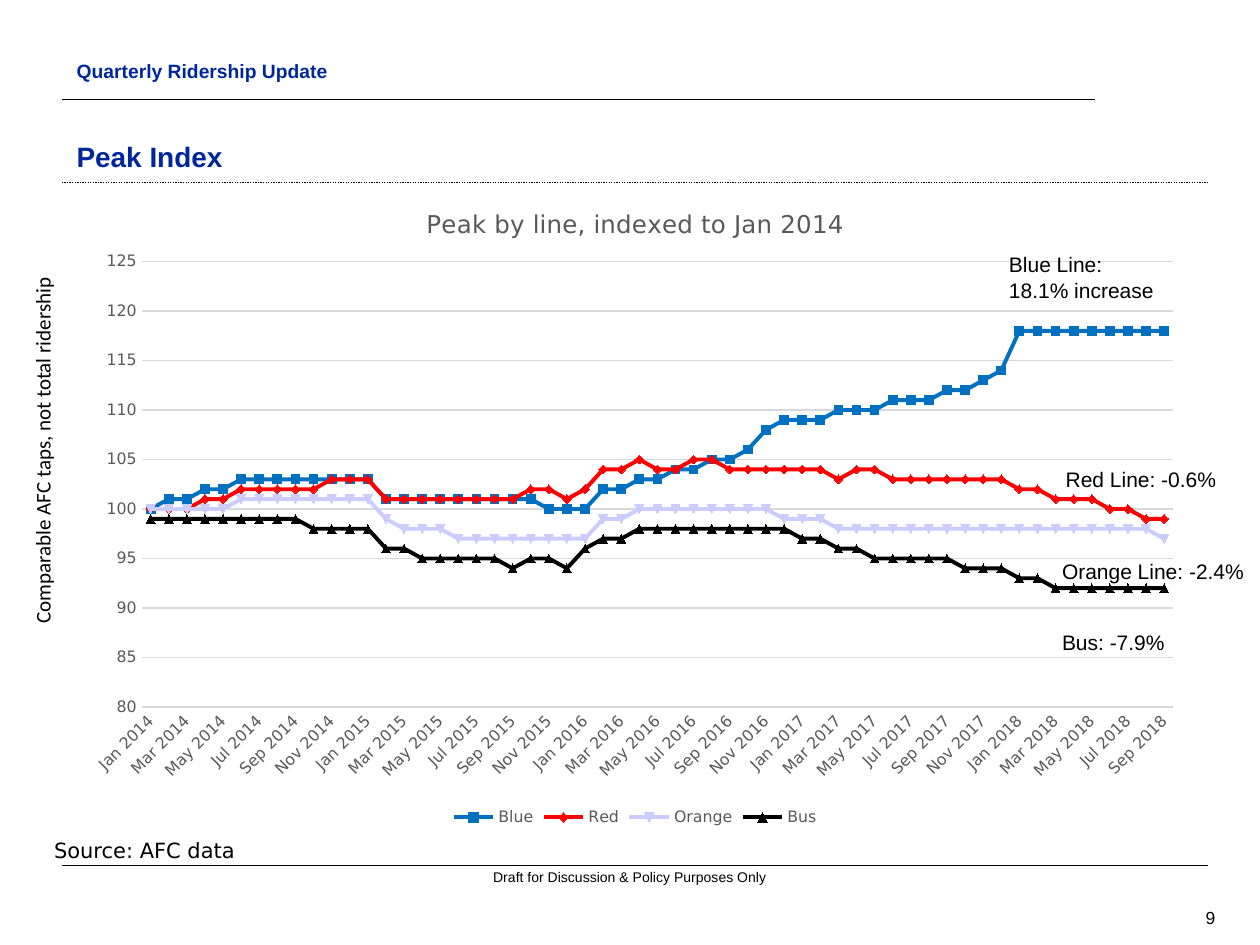
from lxml.etree import SubElement
from pptx import Presentation
from pptx.chart.data import CategoryChartData
from pptx.dml.color import RGBColor
from pptx.enum.chart import XL_CHART_TYPE as ChartType, XL_LEGEND_POSITION as LegendAt
from pptx.enum.chart import XL_TICK_MARK as Tick
from pptx.enum.dml import MSO_LINE as Dash
from pptx.enum.shapes import MSO_CONNECTOR as Connector
from pptx.enum.text import MSO_ANCHOR as Anchor, PP_ALIGN as Align
from pptx.oxml import parse_xml
from pptx.oxml.ns import nsdecls, qn
from pptx.util import Pt

COLORS = {"navy": "00269E", "black": "000000", "gray": "595959", "grid": "D9D9D9",
          "Blue": "0070C0", "Red": "FF0000", "Orange": "CCCCFF", "Bus": "000000"}
MONTHS = "Jan Feb Mar Apr May Jun Jul Aug Sep Oct Nov Dec".split()
PERIODS = [f"{month} {year}" for year in range(2014, 2019) for month in MONTHS][:57]

# Peak index by line, one row per year
INDEX = {
    "Blue": [100, 101, 101, 102, 102, 103, 103, 103, 103, 103, 103, 103,
             103, 101, 101, 101, 101, 101, 101, 101, 101, 101, 100, 100,
             100, 102, 102, 103, 103, 104, 104, 105, 105, 106, 108, 109,
             109, 109, 110, 110, 110, 111, 111, 111, 112, 112, 113, 114,
             118, 118, 118, 118, 118, 118, 118, 118, 118],
    "Red": [100, 100, 100, 101, 101, 102, 102, 102, 102, 102, 103, 103,
            103, 101, 101, 101, 101, 101, 101, 101, 101, 102, 102, 101,
            102, 104, 104, 105, 104, 104, 105, 105, 104, 104, 104, 104,
            104, 104, 103, 104, 104, 103, 103, 103, 103, 103, 103, 103,
            102, 102, 101, 101, 101, 100, 100, 99, 99],
    "Orange": [100, 100, 100, 100, 100, 101, 101, 101, 101, 101, 101, 101,
               101, 99, 98, 98, 98, 97, 97, 97, 97, 97, 97, 97,
               97, 99, 99, 100, 100, 100, 100, 100, 100, 100, 100, 99,
               99, 99, 98, 98, 98, 98, 98, 98, 98, 98, 98, 98,
               98, 98, 98, 98, 98, 98, 98, 98, 97],
    "Bus": [99, 99, 99, 99, 99, 99, 99, 99, 99, 98, 98, 98,
            98, 96, 96, 95, 95, 95, 95, 95, 94, 95, 95, 94,
            96, 97, 97, 98, 98, 98, 98, 98, 98, 98, 98, 98,
            97, 97, 96, 96, 95, 95, 95, 95, 95, 94, 94, 94,
            93, 93, 92, 92, 92, 92, 92, 92, 92],
}


def rgb(name):
    return RGBColor.from_string(COLORS[name])


def chart_layout(**fractions):
    """Manual layout, in fractions of the chart area."""
    modes = '<c:layoutTarget val="inner"/>' if "w" in fractions else ""
    modes += '<c:xMode val="edge"/><c:yMode val="edge"/>'
    sizes = "".join(f'<c:{key} val="{value}"/>' for key, value in fractions.items())
    return parse_xml(f'<c:layout {nsdecls("c")}><c:manualLayout>{modes}{sizes}'
                     '</c:manualLayout></c:layout>')


class RidershipSlide:
    def __init__(self, slide, font="Arial", size=12):
        self.shapes, self.font, self.size = slide.shapes, font, size

    def style(self, font, size, color="black", bold=False, name=None):
        font.name, font.size, font.bold = name or self.font, Pt(size), bold
        font.color.rgb = rgb(color)

    def rule(self, y, right, weight=0.75, dash=None):
        line = self.shapes.add_connector(Connector.STRAIGHT, Pt(35.3), Pt(y), Pt(right), Pt(y))
        line.line.color.rgb, line.line.width = rgb("black"), Pt(weight)
        if dash:
            line.line.dash_style = dash
        SubElement(line.element.spPr, qn("a:effectLst"))

    def text(self, words, left, top, width, height, size=None, color="black", bold=False,
             name=None, align=Align.LEFT, anchor=Anchor.TOP, wrap=True, inset=True, turn=0):
        box = self.shapes.add_textbox(Pt(left), Pt(top), Pt(width), Pt(height))
        box.rotation = turn
        frame = box.text_frame
        frame.text, frame.word_wrap, frame.vertical_anchor = words, wrap, anchor
        if not inset:
            frame.margin_left = frame.margin_right = frame.margin_top = frame.margin_bottom = 0
        for paragraph in frame.paragraphs:
            paragraph.alignment = align
            for run in paragraph.runs:
                self.style(run.font, size or self.size, color, bold, name)

    def line_chart(self, title, categories, values, left, top, width, height, name):
        data = CategoryChartData(number_format="0")
        data.categories = categories
        for line, points in values.items():
            data.add_series(line, points)
        chart = self.shapes.add_chart(ChartType.LINE, Pt(left), Pt(top), Pt(width),
                                      Pt(height), data).chart
        self.style(chart.font, 10, name=name)

        # Title
        heading = chart.chart_title
        heading.text_frame.text = title
        self.style(heading.text_frame.paragraphs[0].runs[0].font, 14, "gray", name=name)
        heading.include_in_layout = False
        title_xml = chart.element.find(".//" + qn("c:title"))
        for old in title_xml.findall(qn("c:layout")):
            title_xml.remove(old)
        title_xml.find(qn("c:tx")).addnext(chart_layout(x=0.31, y=0.04))

        # Plot area and legend
        plot_xml = chart.element.find(".//" + qn("c:plotArea"))
        for old in plot_xml.findall(qn("c:layout")):
            plot_xml.remove(old)
        plot_xml.insert(0, chart_layout(x=0.06, y=0.13, w=0.92, h=0.68))
        chart.has_legend = True
        chart.legend.position, chart.legend.include_in_layout = LegendAt.BOTTOM, False
        self.style(chart.legend.font, 9, "gray", name=name)

        # Axes
        months, scale = chart.category_axis, chart.value_axis
        for axis in (months, scale):
            axis.major_tick_mark = axis.minor_tick_mark = Tick.NONE
            self.style(axis.tick_labels.font, 9, "gray", name=name)
        scale.minimum_scale, scale.maximum_scale, scale.major_unit = 80, 125, 5
        scale.format.line.fill.background()
        for border in (months.format.line, scale.major_gridlines.format.line):
            border.color.rgb, border.width = rgb("grid"), Pt(0.75)
        axis_xml = chart.element.find(".//" + qn("c:catAx"))
        axis_xml.find(qn("c:txPr")).find(qn("a:bodyPr")).set("rot", "-2700000")
        axis_xml.find(qn("c:noMultiLvlLbl")).addprevious(
            parse_xml(f'<c:tickLblSkip {nsdecls("c")} val="2"/>'))

        # Lines
        chart.plots[0].vary_by_categories = False
        for series in chart.plots[0].series:
            series.smooth = False
            series.marker.style = None
            series.format.line.color.rgb = rgb(series.name)
            series.format.line.width = Pt(2.25)


def main():
    deck = Presentation()
    deck.slide_width, deck.slide_height = Pt(720), Pt(540)
    page = RidershipSlide(deck.slides.add_slide(deck.slide_layouts[6]))

    # Rules and footer
    page.rule(56.9, 625.7, weight=1)
    page.rule(104.4, 690.5, dash=Dash.ROUND_DOT)
    page.rule(494.6, 690.5)
    page.text("9", 641.5, 515.5, 60, 18, size=10, align=Align.RIGHT, anchor=Anchor.MIDDLE)
    page.text("Draft for Discussion & Policy Purposes Only", 257, 496.1, 206, 9.4,
              size=8, align=Align.CENTER, inset=False)

    # Headings
    page.text("Quarterly Ridership Update", 36.7, 30.2, 245.5, 18, size=11,
              color="navy", bold=True)
    page.text("Peak Index", 36.7, 65.5, 774.7, 36.7, size=16, color="navy", bold=True,
              anchor=Anchor.BOTTOM)

    # Chart with source and axis note
    page.text("Source: AFC data", 23.8, 475.2, 647.3, 21.6, name="DejaVu Sans")
    page.text("Comparable AFC taps, not total ridership", -83.5, 244.8, 215.3, 21.6,
              name="Calibri", wrap=False, turn=270)
    page.line_chart("Peak by line, indexed to Jan 2014", PERIODS, INDEX,
                    42.5, 100.8, 640.8, 374.4, "DejaVu Sans")

    # Change since January 2014
    for change, left, top, width, height in (
            ("Blue Line:\n18.1% increase", 569.5, 140.4, 120.2, 36),
            ("Orange Line: -2.4%", 599.8, 315.4, 120.2, 21.6),
            ("Red Line: -0.6%", 601.9, 262.8, 120.2, 21.6),
            ("Bus: -7.9%", 599.8, 356.4, 91.4, 21.6)):
        page.text(change, left, top, width, height, anchor=Anchor.MIDDLE)

    deck.save("out.pptx")


if __name__ == "__main__":
    main()
